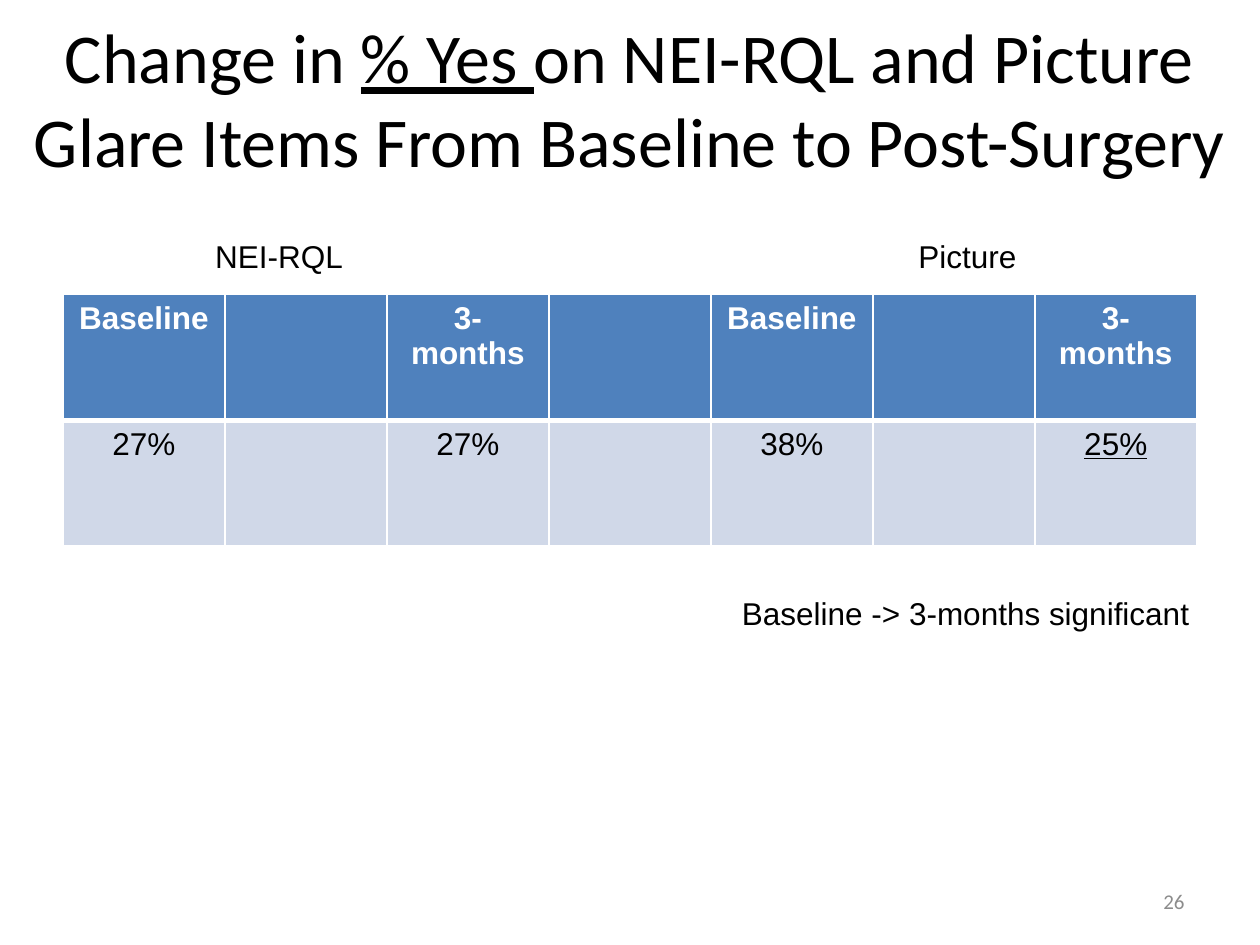
from lxml.etree import SubElement
from pptx import Presentation
from pptx.dml.color import RGBColor
from pptx.enum.text import MSO_ANCHOR, PP_ALIGN
from pptx.oxml.ns import qn
from pptx.util import Inches, Pt

COLS, ROWS = 20, 15
BODY = {"name": "Arial", "size": Pt(18), "color": "000000"}
TITLE = {"name": "Calibri", "size": Pt(40), "color": "000000"}
PAGE = {"name": "Calibri", "size": Pt(12), "color": "8C8C8C"}
HEAD = BODY | {"color": "FFFFFF", "bold": True}
LINE = {"underline": True}


def tint(code):
    return RGBColor.from_string(code)


class Deck:
    """Slide on a grid of COLS by ROWS; places are (col, row, cols, rows)."""

    def __init__(self):
        self.file = Presentation()
        self.file.slide_width, self.file.slide_height = Inches(10), Inches(7.5)
        self.slide = self.file.slides.add_slide(self.file.slide_layouts[6])

    def box(self, place):
        wide = self.file.slide_width / COLS
        high = self.file.slide_height / ROWS
        return [round(n * unit) for n, unit in zip(place, (wide, high) * 2)]

    def words(self, para, runs, style, align=PP_ALIGN.LEFT):
        """Fill a paragraph with (text, extra style) runs."""
        para.alignment = align
        for text, extra in runs:
            run = para.add_run()
            run.text = text
            for key, value in (style | extra).items():
                if key == "color":
                    run.font.color.rgb = tint(value)
                else:
                    setattr(run.font, key, value)

    def text(self, place, runs, style, align=PP_ALIGN.LEFT,
             anchor=MSO_ANCHOR.TOP, wrap=True, tabs=()):
        """Add a text box; tabs are left tab stops in grid columns."""
        frame = self.slide.shapes.add_textbox(*self.box(place)).text_frame
        frame.word_wrap, frame.vertical_anchor = wrap, anchor
        para = frame.paragraphs[0]
        self.words(para, runs, style, align)
        if tabs:
            stops = SubElement(para._p.get_or_add_pPr(), qn("a:tabLst"))
            for col in tabs:
                pos = self.box((col, 0, 0, 0))[0]
                SubElement(stops, qn("a:tab"), pos=str(pos), algn="l")

    def edge(self, cell, widths):
        """Draw white borders; widths are points for left, right, top, bottom."""
        props = cell._tc.get_or_add_tcPr()
        for side, width in zip("LRTB", widths):
            line = SubElement(props, qn(f"a:ln{side}"), w=str(Pt(width)))
            fill = SubElement(line, qn("a:solidFill"))
            SubElement(fill, qn("a:srgbClr"), val="FFFFFF")

    def table(self, place, rows, looks):
        """Add a table; each look is (font style, fill, border widths)."""
        grid = self.slide.shapes.add_table(
            len(rows), len(rows[0]), *self.box(place)).table
        for r, (row, (style, fill, widths)) in enumerate(zip(rows, looks)):
            for c, (text, extra) in enumerate(row):
                cell = grid.cell(r, c)
                self.edge(cell, widths)
                cell.fill.solid()
                cell.fill.fore_color.rgb = tint(fill)
                runs = [(text, extra)] if text else []
                self.words(cell.text_frame.paragraphs[0], runs, style,
                           PP_ALIGN.CENTER)


def main():
    deck = Deck()
    deck.text((0.24, 0.3, 19.5, 2.5),
              [("Change in ", {}), ("% Yes ", LINE),
               ("on NEI-RQL and Picture Glare Items "
                "From Baseline to Post-Surgery", {})],
              TITLE, PP_ALIGN.CENTER, MSO_ANCHOR.MIDDLE)
    deck.text((14.33, 13.9, 4.67, 0.8), [("26", {})], PAGE,
              PP_ALIGN.RIGHT, MSO_ANCHOR.MIDDLE)
    deck.text((1, 3.67, 18, 0.8), [("\tNEI-RQL\tPicture", {})], BODY,
              tabs=(2.22, 13.38))

    gap = ("", {})
    pair = [("Baseline", {}), gap, ("3-months", {})]
    rows = [pair + [gap] + pair,
            [("27%", {}), gap, ("27%", {}), gap,
             ("38%", {}), gap, ("25%", LINE)]]
    deck.table((1, 4.67, 18, 4), rows,
               [(HEAD, "4F81BD", (1, 1, 1, 3)),
                (BODY, "D0D8E8", (1, 1, 3, 1))])

    deck.text((11.58, 9.33, 7.58, 0.8),
              [("Baseline -> 3-months significant", {})], BODY, wrap=False)
    deck.file.save("out.pptx")


if __name__ == "__main__":
    main()
